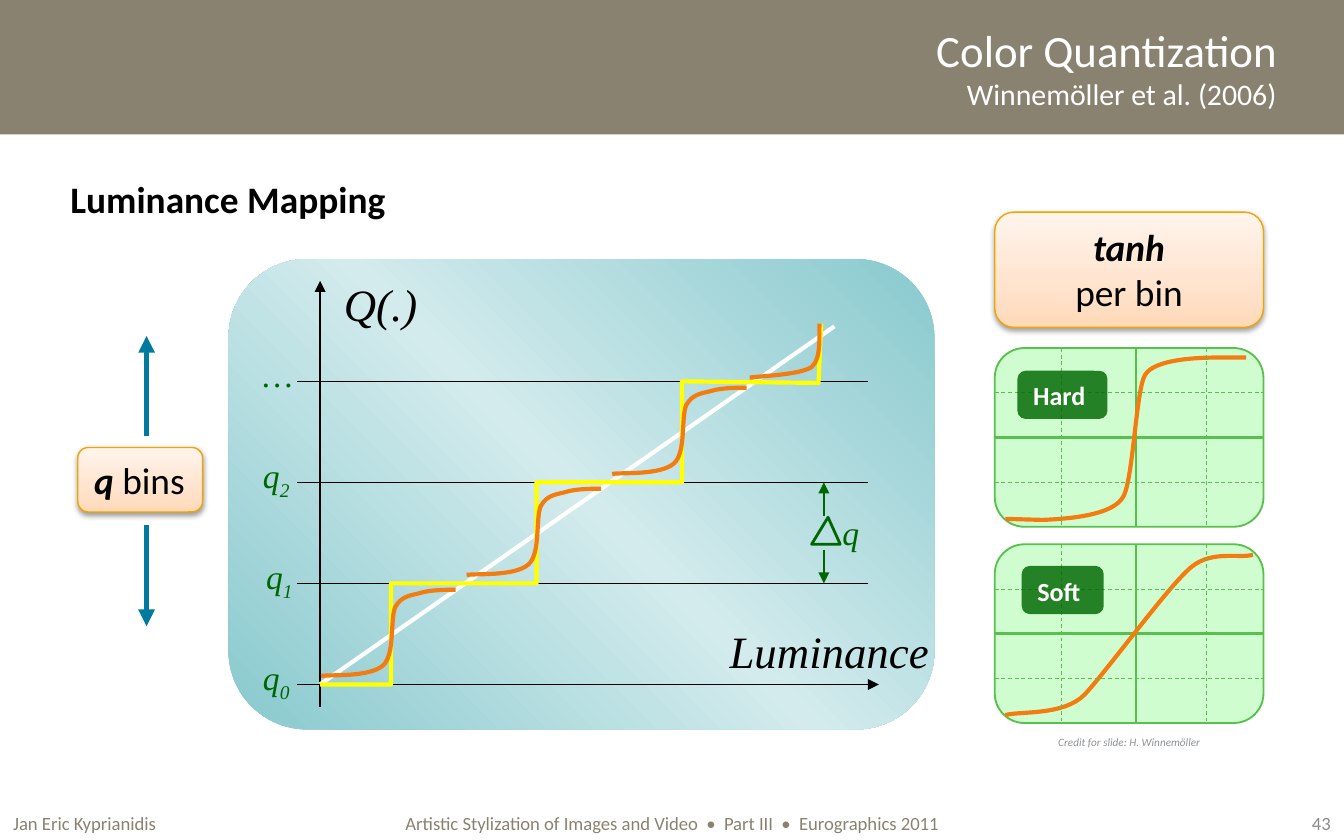
from pptx import Presentation
from pptx.dml.color import RGBColor
from pptx.enum.dml import MSO_LINE
from pptx.enum.shapes import MSO_CONNECTOR, MSO_SHAPE
from pptx.enum.text import MSO_ANCHOR, MSO_AUTO_SIZE, PP_ALIGN
from pptx.oxml import parse_xml
from pptx.oxml.ns import nsdecls, qn
from pptx.util import Cm, Pt

LEFT, MID, RIGHT = PP_ALIGN.LEFT, PP_ALIGN.CENTER, PP_ALIGN.RIGHT
RECT, ROUND = MSO_SHAPE.RECTANGLE, MSO_SHAPE.ROUNDED_RECTANGLE
STRAIGHT, DASH = MSO_CONNECTOR.STRAIGHT, MSO_LINE.DASH


class Theme:
    sans, serif = "Calibri", "Times New Roman"
    black, white, band, page, credit = "000000", "FFFFFF", "898270", "8C8C8C", "8E9496"
    green, grid, card = "006600", "59C04E", "CFFDCF"
    curve, step, arrow, edge = "F27C10", "FFFF00", "007A9E", "F1A400"
    panel = ((0, "88C9CE"), (50, "D3EBED"), (100, "88C9CE"))
    peach = ((0, "FFD9B8"), (35, "FFE3CD"), (100, "FFF4EC"))
    title, axis, head, sub, label, tag, foot, tiny = 24, 24, 20, 16, 18, 14, 10, 6
    thin, fine, rim, mid, bold, thick = 0.5, 0.75, 1, 1.5, 2.25, 3


# Text pieces: (words, size, colour, style letters: b bold, i italic, s serif, - subscript)
T = Theme
TITLE = [[("Color Quantization\v", T.title, T.white, ""),
          ("Winnemöller et al. (2006)", T.sub, T.white, "")]]
HEAD = [[("Luminance Mapping", T.head, T.black, "b")]]
BINS = [[("q ", T.head, T.black, "bi"), ("bins", T.head, T.black, "")]]
TANH = [[("tanh", T.head, T.black, "bi")], [("per bin", T.head, T.black, "")]]
CREDIT = [[("Credit for slide: H. Winnemöller", T.tiny, T.credit, "i")]]
FOOT = [  # left, width, align, words, colour
    (0, 5.08, LEFT, "Jan Eric Kyprianidis", T.band),
    (5.08, 15.24, MID, "Artistic Stylization of Images and Video  •  Part III  •  Eurographics 2011", T.band),
    (20.32, 5.08, RIGHT, "43", T.page)]
TICKS = [("q", "0", 4.72), ("q", "1", 4.78), ("q", "2", 4.72), ("…", "", 4.72)]
AXES = [("Luminance", 13.54, 11.66, 4.27), ("Q(.)", 6.25, 5.11, 1.9)]

# Curves: a start, then one point for each L piece and three for each C piece
STEP = [(0, 0), (.18, -.03), (.91, .03), (1.17, -.2), (1.4, -.41), (1.3, -1.07), (1.4, -1.3),
        (1.52, -1.52), (1.7, -1.52), (1.88, -1.57), (2.06, -1.63), (2.39, -1.63), (2.54, -1.63)]
LAST = [(0, 0), (.18, -.03), (.94, -.05), (1.17, -.2), (1.37, -.38), (1.3, -.84), (1.32, -1.02)]
HARD = [(.2, 3.23), (.91, 3.25), (1.32, 3.23), (2.26, 3.18), (2.44, 2.79), (2.62, 2.41),
        (2.67, .81), (2.84, .51), (3.02, .2), (3.89, .18), (4.22, .18), (4.75, .18)]
SOFT = [(.2, 3.23), (.46, 3.15), (1.3, 3.25), (1.7, 2.84), (2.08, 2.44), (3.2, .91),
        (3.63, .51), (4.04, .08), (4.6, .28), (4.88, .2)]
CARDS = [("Hard", 6.58, HARD, "LCCCL", (.43, .43, 1.7, .91)),
         ("Soft", 10.29, SOFT, "CCC", (.51, .41, 1.55, .91))]

SIDE, WIDE, TALL = 18.8, 5.08, 3.38
ZERO, BASE, RISE, RUN = 6.05, 12.94, 1.91, 2.75
ROWS = [BASE - RISE * i for i in range(4)]

deck = Presentation()
deck.slide_width, deck.slide_height = Cm(25.4), Cm(15.88)
slide = deck.slides.add_slide(deck.slide_layouts[6])
shapes = slide.shapes


def rgb(tone):
    return RGBColor.from_string(tone)


def write(shape, paras, align=LEFT, wrap=False, grow=True, inset=None):
    """Fill a shape with text; a box that does not grow is centred vertically."""
    frame = shape.text_frame
    frame.word_wrap = wrap
    frame.auto_size = MSO_AUTO_SIZE.SHAPE_TO_FIT_TEXT if grow else MSO_AUTO_SIZE.NONE
    frame.vertical_anchor = MSO_ANCHOR.TOP if grow else MSO_ANCHOR.MIDDLE
    if inset is not None:
        frame.margin_left = frame.margin_right = Cm(inset)
        frame.margin_top = frame.margin_bottom = 0
    for n, parts in enumerate(paras):
        para = frame.add_paragraph() if n else frame.paragraphs[0]
        para.alignment = align
        para.text = parts[0][0]
        for part in parts[1:]:
            para.add_run().text = part[0]
        for run, (_, size, tone, style) in zip(para.runs, parts):
            font = run.font
            font.size, font.color.rgb = Pt(size), rgb(tone)
            font.name = T.serif if "s" in style else T.sans
            font.bold, font.italic = "b" in style, "i" in style
            if "-" in style:
                run._r.get_or_add_rPr().set("baseline", "-25000")


def label(x, y, w, h, paras, **opts):
    box = shapes.add_textbox(Cm(x), Cm(y), Cm(w), Cm(h))
    write(box, paras, **opts)


def block(kind, x, y, w, h, fill=None, line=None, width=T.fine):
    shape = shapes.add_shape(kind, Cm(x), Cm(y), Cm(w), Cm(h))
    shape.shadow.inherit = False
    if fill:
        shape.fill.solid()
        shape.fill.fore_color.rgb = rgb(fill)
    else:
        shape.fill.background()
    if line:
        shape.line.color.rgb, shape.line.width = rgb(line), Pt(width)
    else:
        shape.line.fill.background()
    return shape


def blend(shape, stops, angle):
    """Swap the solid fill for a linear gradient."""
    marks = "".join(f'<a:gs pos="{pos * 1000}"><a:srgbClr val="{tone}"/></a:gs>' for pos, tone in stops)
    grad = parse_xml(f'<a:gradFill {nsdecls("a")} rotWithShape="1"><a:gsLst>{marks}</a:gsLst>'
                     f'<a:lin ang="{angle * 60000}" scaled="0"/></a:gradFill>')
    props = shape._element.spPr
    props.replace(props.find(qn("a:solidFill")), grad)


def badge(x, y, w, h, paras, **opts):
    """Peach box with a soft shadow below it."""
    shape = block(ROUND, x, y, w, h, T.white, T.edge)
    blend(shape, T.peach, 270)
    shape._element.spPr.find(qn("a:effectLst")).append(parse_xml(
        f'<a:outerShdw {nsdecls("a")} blurRad="{Pt(3.1)}" dist="{Pt(1.6)}" dir="5400000" rotWithShape="0">'
        '<a:srgbClr val="000000"><a:alpha val="38000"/></a:srgbClr></a:outerShdw>'))
    write(shape, paras, **opts)


def rule(x1, y1, x2, y2, tone, width, arrow=False, dash=None):
    line = shapes.add_connector(STRAIGHT, Cm(x1), Cm(y1), Cm(x2), Cm(y2))
    line.line.color.rgb, line.line.width = rgb(tone), Pt(width)
    if dash:
        line.line.dash_style = dash
    if arrow:
        line.line._get_or_add_ln().append(parse_xml(f'<a:tailEnd {nsdecls("a")} type="triangle"/>'))
    line._element.spPr.append(parse_xml(f'<a:effectLst {nsdecls("a")}/>'))


def trace(points, tone, width=T.bold, close=False):
    spots = [(Cm(x), Cm(y)) for x, y in points]
    pen = shapes.build_freeform(*spots[0])
    pen.add_line_segments(spots[1:], close=close)
    shape = pen.convert_to_shape()
    shape.shadow.inherit = False
    shape.fill.background()
    shape.line.color.rgb, shape.line.width = rgb(tone), Pt(width)
    return shape


def bend(points, kinds, x, y):
    """Trace the points, shifted by x and y, and join each C piece into one cubic curve."""
    shape = trace([(x + px, y + py) for px, py in points], T.curve)
    legs = iter(list(shape._element.iter(qn("a:lnTo"))))
    for kind in kinds:
        first = next(legs)
        if kind == "C":
            cubic = parse_xml(f'<a:cubicBezTo {nsdecls("a")}/>')
            first.addprevious(cubic)
            for leg in (first, next(legs), next(legs)):
                cubic.append(leg[0])
                leg.getparent().remove(leg)


# Frame of the slide
block(RECT, 0, 0, 25.4, 2.54, T.band)
label(6.35, 0, 17.78, 2.54, TITLE, align=RIGHT, wrap=True, grow=False, inset=0)
for x, w, align, words, tone in FOOT:
    label(x, 15.24, w, .64, [[(words, T.foot, tone, "")]], align=align, wrap=True, grow=False, inset=.25)
write(block(ROUND, 1.02, 3.15, 6.58, 1.22), HEAD)

# Luminance plot
blend(block(ROUND, 4.32, 4.9, 13.34, 8.89, T.white), T.panel, 315)
rule(ZERO, 13.36, ZERO, 5.31, T.black, T.fine, arrow=True)
for n, (row, (name, sub, x)) in enumerate(zip(ROWS, TICKS)):
    rule(5.61, row, 16.41 if n else 16.61, row, T.black, T.fine, arrow=not n)
    parts = [(name, T.label, T.green, "is")]
    if sub:
        parts.append((sub, T.label, T.green, "is-"))
    label(x, row - .64, 1.04, 1.02, [parts])
trace([(ZERO, BASE), (15.77, 6.17)], T.white)
stairs = [(7.39 + RUN * n, row) for n in range(3) for row in ROWS[n:n + 2]]
trace([(ZERO, BASE), *stairs, (15.47, 7.24), (15.52, 6.12)], T.step)
for words, x, y, w in AXES:
    label(x, y, w, 1.27, [[(words, T.axis, T.black, "is")]])
label(15.67, 9.55, .84, 1.02, [[("q", T.label, T.green, "is")]])
trace([(15.34, 10.29), (15.65, 9.78), (15.88, 10.29)], T.green, T.mid, close=True)
for start, row in zip((10.39, 9.75), ROWS[1:3]):
    rule(15.57, start, 15.57, row, T.green, T.fine, arrow=True)
for n in range(3):
    bend(STEP, "CCCC", 6.07 + RUN * n, 12.78 - RISE * n)
bend(LAST, "CC", 14.17, 7.14)

# Bin count
badge(1.47, 8.46, 2.36, 1.22, BINS)
for start, end in ((8.25, 6.35), (9.93, 11.84)):
    rule(2.77, start, 2.77, end, T.arrow, T.thick, arrow=True)

# Cards on the right
badge(SIDE, 4.01, WIDE, 2.18, TANH, align=MID, wrap=True)
for name, top, curve, kinds, (dx, dy, w, h) in CARDS:
    block(ROUND, SIDE, top, WIDE, TALL, T.card, T.grid, T.rim)
    rule(SIDE + 2.67, top, SIDE + 2.67, top + TALL, T.grid, T.mid)
    rule(SIDE, top + TALL / 2, SIDE + WIDE, top + TALL / 2, T.grid, T.mid)
    bend(curve, kinds, SIDE, top)
    for x in (4.01, 1.27):
        rule(SIDE + x, top, SIDE + x, top + TALL, T.grid, T.thin, dash=DASH)
    for part in (.25, .75):
        y = top + TALL * part
        rule(SIDE, y, SIDE + WIDE, y, T.grid, T.thin, dash=DASH)
    tag = block(ROUND, SIDE + dx, top + dy, w, h, T.green)
    tone = tag._element.spPr.find(qn("a:solidFill"))[0]
    tone.append(parse_xml(f'<a:alpha {nsdecls("a")} val="82000"/>'))
    write(tag, [[(name, T.tag, T.white, "b")]])
label(SIDE, 13.77, WIDE, .51, CREDIT, align=MID, wrap=True, grow=False, inset=0)

deck.save("out.pptx")
